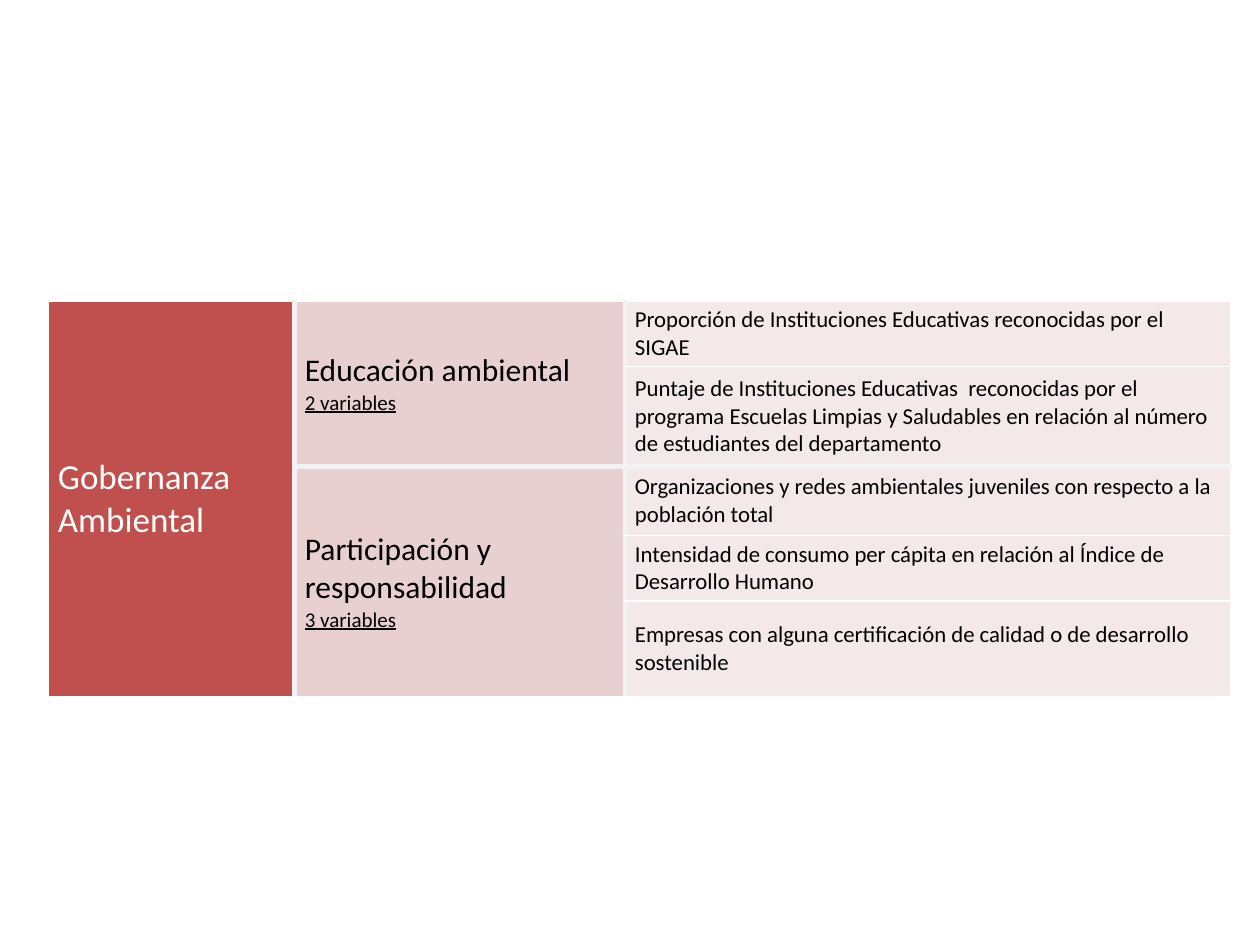
from lxml.etree import SubElement
from pptx import Presentation
from pptx.dml.color import RGBColor
from pptx.enum.text import MSO_ANCHOR
from pptx.oxml.ns import qn
from pptx.util import Inches, Pt

FONT = "Calibri"
COLORS = {
    "theme": "C0504D",
    "group": "E8D0D0",
    "variable": "F4E9E9",
    "divider": "F2F2F2",
    "light": "FFFFFF",
    "dark": "000000",
}
COLUMN_WIDTHS = [1.96, 2.62, 4.81]
ROW_HEIGHTS = [0.51, 0.79, 0.55, 0.52, 0.75]
THEME = ["Gobernanza", "Ambiental"]
GROUPS = [
    ("Educación ambiental", [
        "Proporción de Instituciones Educativas reconocidas por el SIGAE",
        "Puntaje de Instituciones Educativas  reconocidas por el programa "
        "Escuelas Limpias y Saludables en relación al número de estudiantes "
        "del departamento",
    ]),
    ("Participación y responsabilidad", [
        "Organizaciones y redes ambientales juveniles con respecto a la "
        "población total",
        "Intensidad de consumo per cápita en relación al Índice de "
        "Desarrollo Humano",
        "Empresas con alguna certificación de calidad o de desarrollo "
        "sostenible",
    ]),
]


def add_span(para, text, size, color, underline=False):
    span = para.add_run()
    span.text = text
    span.font.name = FONT
    span.font.size = Pt(size)
    span.font.underline = underline
    span.font.color.rgb = RGBColor.from_string(COLORS[color])


def add_border(cell, side, color, width):
    line = SubElement(cell._tc.get_or_add_tcPr(), qn(f"a:ln{side}"), w=str(Pt(width)))
    fill = SubElement(line, qn("a:solidFill"))
    SubElement(fill, qn("a:srgbClr"), val=COLORS[color])


def style_cell(cell, fill, thick_sides):
    for side in "LRTB":
        thick = side in thick_sides
        add_border(cell, side, "divider" if thick else "light", 3 if thick else 1)
    cell.fill.solid()
    cell.fill.fore_color.rgb = RGBColor.from_string(COLORS[fill])
    cell.vertical_anchor = MSO_ANCHOR.MIDDLE
    cell.margin_left = cell.margin_right = Inches(0.08)
    cell.margin_top = cell.margin_bottom = Inches(0.04)


def create_table(page):
    frame = page.shapes.add_table(
        len(ROW_HEIGHTS), len(COLUMN_WIDTHS), Inches(0.38), Inches(2.39),
        Inches(sum(COLUMN_WIDTHS)), Inches(sum(ROW_HEIGHTS)))
    table = frame.table
    table.first_row = table.horz_banding = False
    for column, width in zip(table.columns, COLUMN_WIDTHS):
        column.width = Inches(width)
    for row, height in zip(table.rows, ROW_HEIGHTS):
        row.height = Inches(height)
    return table


def add_theme(table):
    last = len(ROW_HEIGHTS) - 1
    for row in range(last + 1):
        style_cell(table.cell(row, 0), "theme", "R")
    cell = table.cell(0, 0)
    cell.merge(table.cell(last, 0))
    para = cell.text_frame.paragraphs[0]
    for index, word in enumerate(THEME):
        if index:
            para.add_line_break()
        add_span(para, word, 20, "light")


def add_group(table, first, title, variables):
    last = first + len(variables) - 1
    for row, variable in enumerate(variables, first):
        thick = "T" if row == first and first > 0 else ""
        if row == last and last < len(ROW_HEIGHTS) - 1:
            thick += "B"
        style_cell(table.cell(row, 1), "group", "LR" + thick)
        cell = table.cell(row, 2)
        style_cell(cell, "variable", "L" + thick)
        add_span(cell.text_frame.paragraphs[0], variable, 13, "dark")
    heading = table.cell(first, 1)
    heading.merge(table.cell(last, 1))
    frame = heading.text_frame
    add_span(frame.paragraphs[0], title, 18, "dark")
    add_span(frame.add_paragraph(), f"{len(variables)} variables", 12, "dark", True)


def main():
    deck = Presentation()
    deck.slide_width, deck.slide_height = Inches(10), Inches(7.5)
    page = deck.slides.add_slide(deck.slide_layouts[6])
    table = create_table(page)
    add_theme(table)
    first = 0
    for title, variables in GROUPS:
        add_group(table, first, title, variables)
        first += len(variables)
    deck.save("out.pptx")


if __name__ == "__main__":
    main()
